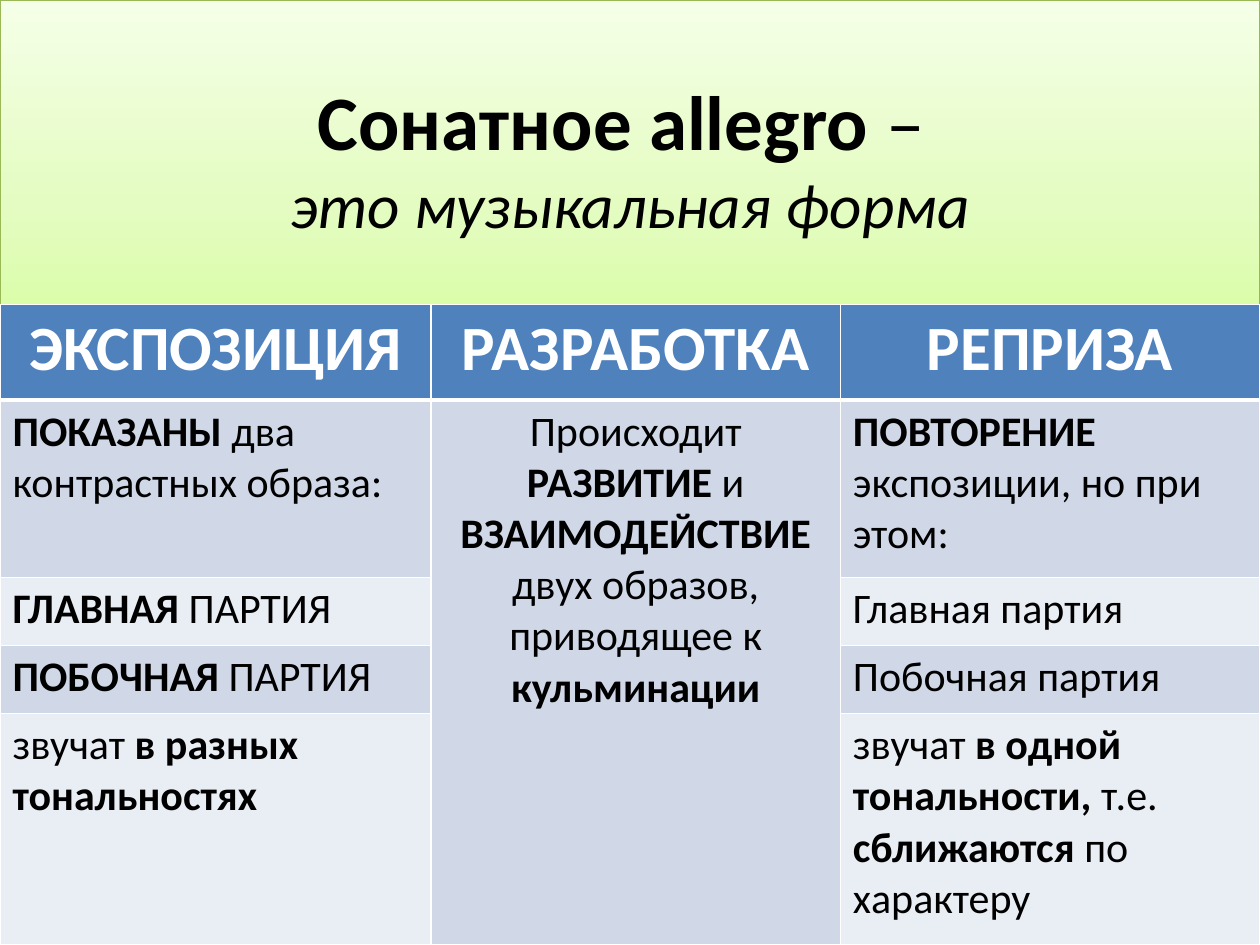
"""Builds a slide about the three sections of sonata form."""
from copy import deepcopy
from dataclasses import dataclass

from lxml import etree
from pptx import Presentation
from pptx.dml.color import RGBColor
from pptx.enum.text import MSO_ANCHOR, PP_ALIGN
from pptx.oxml.ns import qn
from pptx.util import Cm, Pt

CENTER, LEFT = PP_ALIGN.CENTER, PP_ALIGN.LEFT
MIDDLE = MSO_ANCHOR.MIDDLE
FONT = "Calibri"
BLACK, WHITE = "000000", "FFFFFF"
HEADER, DARK, LIGHT = "4F81BD", "D0D8E8", "E9EDF4"
STOPS = [(0, "DAFDA7"), (0.35, "E4FCC2"), (1, "F5FFE7")]
COLS = [8.69, 8.25, 8.46]
ROWS = [1.92, 3.58, 1.37, 1.37, 4.67]


@dataclass
class Entry:
    text: str
    row: int
    col: int
    align: PP_ALIGN = LEFT
    span: int = 1


HEADINGS = ["ЭКСПОЗИЦИЯ", "РАЗРАБОТКА", "РЕПРИЗА"]
EXPOSITION = [
    "*ПОКАЗАНЫ* два контрастных образа:",
    "*ГЛАВНАЯ* ПАРТИЯ",
    "*ПОБОЧНАЯ* ПАРТИЯ",
    "звучат *в разных тональностях*",
]
DEVELOPMENT = ("Происходит *РАЗВИТИЕ* и *ВЗАИМОДЕЙСТВИЕ* двух образов, "
               "приводящее к *кульминации*")
REPRISE = [
    "*ПОВТОРЕНИЕ* экспозиции, но при этом:",
    "Главная партия",
    "Побочная партия",
    "звучат *в одной тональности,* т.е. *сближаются* по характеру",
]
ENTRIES = (
    [Entry(f"*{t}*", 0, c, CENTER) for c, t in enumerate(HEADINGS)]
    + [Entry(t, r, 0) for r, t in enumerate(EXPOSITION, 1)]
    + [Entry(DEVELOPMENT, 1, 1, CENTER, 4)]
    + [Entry(t, r, 2) for r, t in enumerate(REPRISE, 1)]
)


def rgb(value: str) -> RGBColor:
    """Turn a hex string into a colour."""
    return RGBColor.from_string(value)


def write(p, text: str, size: float, color: str = BLACK,
          italic: bool = False, align: PP_ALIGN = LEFT) -> None:
    """Add text to a paragraph, with *starred* parts in bold."""
    p.alignment = align
    for i, part in enumerate(text.split("*")):
        if part:
            r = p.add_run()
            r.text = part
            r.font.name, r.font.size = FONT, Pt(size)
            r.font.bold, r.font.italic = i % 2 == 1, italic
            r.font.color.rgb = rgb(color)


def add_color(parent, value: str):
    """Append a hex colour element to an XML parent."""
    return etree.SubElement(parent, qn("a:srgbClr"), val=value)


def add_shadow(s) -> None:
    """Give a shape a soft shadow below it."""
    effects = etree.SubElement(s._element.spPr, qn("a:effectLst"))
    shadow = etree.SubElement(
        effects, qn("a:outerShdw"), blurRad=str(Pt(3.1)), dist=str(Pt(1.6)),
        dir="5400000", rotWithShape="0")
    etree.SubElement(add_color(shadow, BLACK), qn("a:alpha"), val="38000")


def set_gradient(s) -> None:
    """Fill a shape with the vertical green gradient."""
    s.fill.gradient()
    s.fill.gradient_angle = 90
    stop_list = s._element.spPr.find(".//" + qn("a:gsLst"))
    stop_list.append(deepcopy(stop_list[-1]))
    for stop, (position, color) in zip(s.fill.gradient_stops, STOPS):
        stop.position = position
        stop.color.rgb = rgb(color)


def style_cell(cell, row: int, fill: str) -> None:
    """Set white borders and a solid fill on a cell."""
    props = cell._tc.get_or_add_tcPr()
    widths = {"L": 1, "R": 1, "T": 3 if row == 1 else 1,
              "B": 3 if row == 0 else 1}
    for side, width in widths.items():
        ln = etree.SubElement(props, qn(f"a:ln{side}"), w=str(Pt(width)))
        add_color(etree.SubElement(ln, qn("a:solidFill")), WHITE)
    cell.fill.solid()
    cell.fill.fore_color.rgb = rgb(fill)


def add_title(slide) -> None:
    """Format and fill the title placeholder."""
    s = slide.shapes.title
    s.left, s.top, s.width, s.height = Cm(0), Cm(0), Cm(25.4), Cm(6.35)
    set_gradient(s)
    s.line.color.rgb = rgb("98B955")
    s.line.width = Pt(0.75)
    add_shadow(s)
    tf = s.text_frame
    tf.vertical_anchor = MIDDLE
    p = tf.paragraphs[0]
    write(p, "*Сонатное allegro *– ", 44, align=CENTER)
    p.add_line_break()
    write(p, "это музыкальная форма", 36, italic=True, align=CENTER)


def add_sections(slide) -> None:
    """Add the table that compares the sections."""
    table = slide.shapes.add_table(
        len(ROWS), len(COLS), Cm(0), Cm(6.14), Cm(sum(COLS)),
        Cm(sum(ROWS))).table
    for col, width in zip(table.columns, COLS):
        col.width = Cm(width)
    for row, height in zip(table.rows, ROWS):
        row.height = Cm(height)
    for r in range(len(ROWS)):
        for c in range(len(COLS)):
            band = DARK if r % 2 or c == 1 else LIGHT
            style_cell(table.cell(r, c), r, band if r else HEADER)
    for e in ENTRIES:
        cell = table.cell(e.row, e.col)
        if e.span > 1:
            cell.merge(table.cell(e.row + e.span - 1, e.col))
        size, color = (24, BLACK) if e.row else (36, WHITE)
        write(cell.text_frame.paragraphs[0], e.text, size, color,
              align=e.align)


def main() -> None:
    """Build and save the presentation."""
    prs = Presentation()
    prs.slide_width, prs.slide_height = Cm(25.4), Cm(19.05)
    slide = prs.slides.add_slide(prs.slide_layouts[5])
    add_title(slide)
    add_sections(slide)
    prs.save("out.pptx")


if __name__ == "__main__":
    main()
